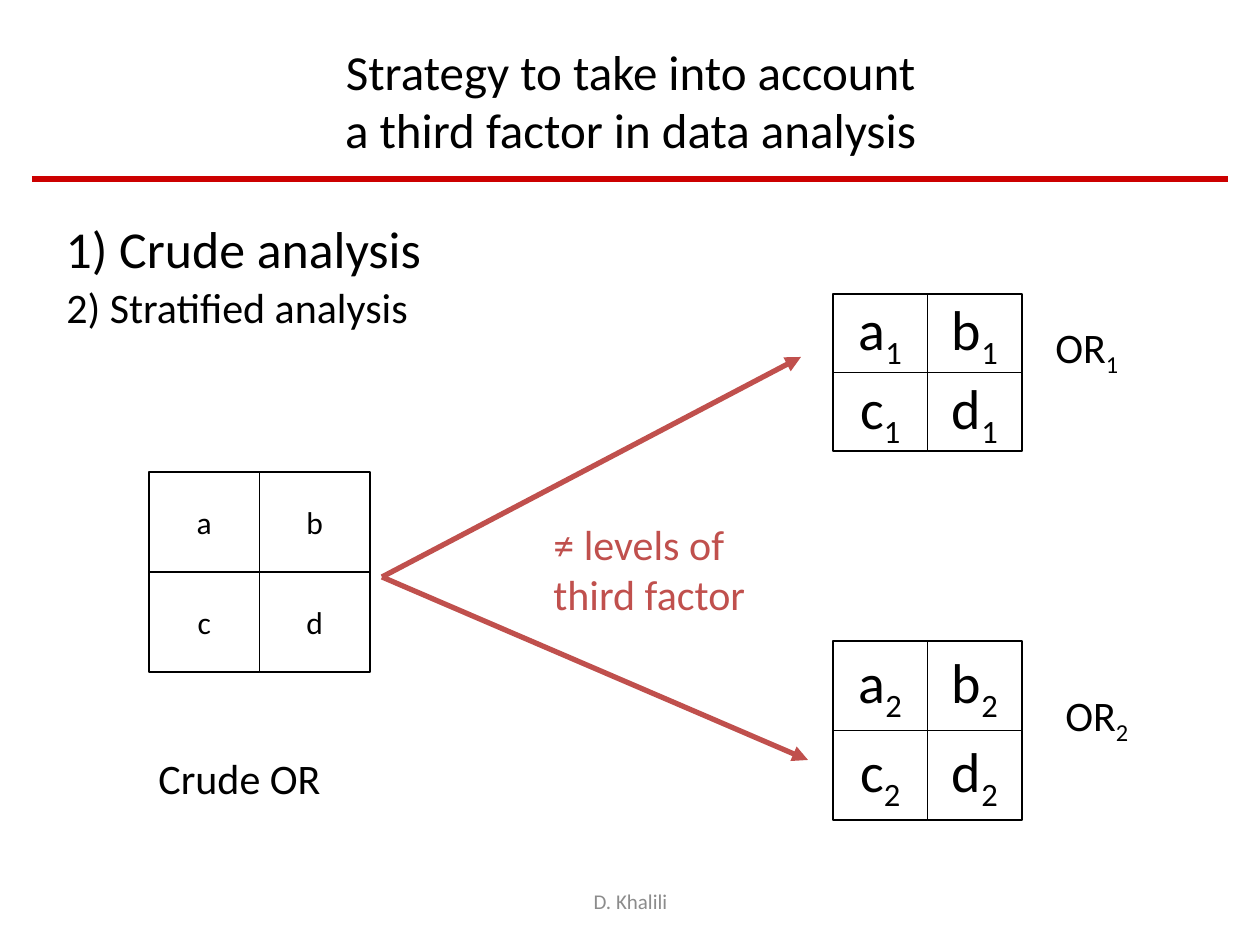
from dataclasses import dataclass

from lxml import etree
from pptx import Presentation
from pptx.dml.color import RGBColor
from pptx.enum.shapes import MSO_CONNECTOR, MSO_SHAPE
from pptx.enum.text import MSO_ANCHOR, MSO_AUTO_SIZE, PP_ALIGN
from pptx.oxml.ns import qn
from pptx.util import Emu, Inches, Pt

LINE, RECT = MSO_CONNECTOR.STRAIGHT, MSO_SHAPE.RECTANGLE
TOP, MID = MSO_ANCHOR.TOP, MSO_ANCHOR.MIDDLE
LEFT, MIDDLE = PP_ALIGN.LEFT, PP_ALIGN.CENTER
FIXED = MSO_AUTO_SIZE.NONE
FONT = "Calibri"
SCALE = 914400 / 126
COLORS = {"ink": "000000", "rule": "CC0000", "accent": "C0504D", "foot": "8C8C8C"}


@dataclass
class Box:
    x: int
    y: int
    w: int
    h: int


@dataclass
class Grid:
    """A two by two table of counts; sub is the stratum number."""
    box: Box
    size: int
    sub: str = ""


@dataclass
class Label:
    box: Box
    text: str
    sub: str = ""
    color: str = "ink"
    size: float = 24
    align: PP_ALIGN = LEFT
    anchor: MSO_ANCHOR = TOP
    hang: bool = False


@dataclass
class Link:
    x1: int
    y1: int
    x2: int
    y2: int
    color: str = "accent"
    head: bool = True


TITLE = Label(Box(95, 21, 1071, 158),
              "Strategy to take into account\na third factor in data analysis",
              size=28, align=MIDDLE, anchor=MID)
BODY = Label(Box(53, 210, 408, 64), "1) Crude analysis", size=29.6, hang=True)
LABELS = [
    Label(Box(146, 746, 222, 63), "Crude OR"),
    Label(Box(54, 275, 456, 69), "2) Stratified analysis", hang=True),
    Label(Box(1043, 315, 103, 63), "OR", "1"),
    Label(Box(1053, 683, 103, 63), "OR", "2"),
    Label(Box(541, 512, 247, 113), "≠ levels of\nthird factor", color="accent"),
    Label(Box(431, 876, 399, 50), "D. Khalili", color="foot", size=12,
          align=MIDDLE, anchor=MID),
]
GRIDS = [
    Grid(Box(149, 472, 221, 200), 18),
    Grid(Box(833, 294, 189, 157), 32, "1"),
    Grid(Box(833, 641, 189, 179), 32, "2"),
]
LINKS = [
    Link(32, 179, 1228, 179, "rule", False),
    Link(382, 577, 801, 357),
    Link(382, 577, 808, 760),
]


def px(n: float) -> Emu:
    return Emu(round(n * SCALE))


def rgb(name: str) -> RGBColor:
    return RGBColor.from_string(COLORS[name])


def add_run(para, text: str, size: float, color: str, low: bool = False) -> None:
    run = para.add_run()
    run.text = text
    run.font.name, run.font.size = FONT, Pt(size)
    run.font.color.rgb = rgb(color)
    if low:
        run._r.get_or_add_rPr().set("baseline", "-25000")


def write(shape, label: Label, wrap: bool = True) -> None:
    frame = shape.text_frame
    frame.auto_size, frame.word_wrap = FIXED, wrap
    frame.vertical_anchor = label.anchor
    para = frame.paragraphs[0]
    para.alignment = label.align
    if label.hang:
        para.space_before = Pt(round(label.size * 0.2, 1))
        props = para._p.get_or_add_pPr()
        props.set("marL", str(Inches(0.5)))
        props.set("indent", str(-Inches(0.5)))
        etree.SubElement(props, qn("a:buNone"))
    for i, line in enumerate(label.text.split("\n")):
        if i:
            para.add_line_break()
        add_run(para, line, label.size, label.color)
    if label.sub:
        add_run(para, label.sub, label.size, label.color, True)


def fill_holder(shape, label: Label) -> None:
    """Move a placeholder to its label's box and write the label in it."""
    box = label.box
    shape.left, shape.top = px(box.x), px(box.y)
    shape.width, shape.height = px(box.w), px(box.h)
    write(shape, label)


def add_label(shapes, label: Label) -> None:
    box = label.box
    write(shapes.add_textbox(px(box.x), px(box.y), px(box.w), px(box.h)), label)


def add_grid(shapes, grid: Grid) -> None:
    box = grid.box
    w, h = box.w / 2, box.h / 2
    for i, name in enumerate("abcd"):
        row, col = divmod(i, 2)
        cell = shapes.add_shape(RECT, px(box.x + col * w), px(box.y + row * h),
                                px(w), px(h))
        cell.shadow.inherit = False
        cell.fill.background()
        cell.line.color.rgb, cell.line.width = rgb("ink"), Pt(1)
        write(cell, Label(box, name, grid.sub, size=grid.size,
                          align=MIDDLE, anchor=MID), wrap=False)


def add_link(shapes, link: Link) -> None:
    line = shapes.add_connector(LINE, px(link.x1), px(link.y1),
                                px(link.x2), px(link.y2))
    line.line.color.rgb, line.line.width = rgb(link.color), Pt(3)
    if link.head:
        etree.SubElement(line.line._get_or_add_ln(), qn("a:tailEnd"), type="triangle")
    etree.SubElement(line._element.spPr, qn("a:effectLst"))


def main() -> None:
    deck = Presentation()
    deck.slide_width, deck.slide_height = Inches(10), Inches(7.5)
    slide = deck.slides.add_slide(deck.slide_layouts[1])
    shapes = slide.shapes
    fill_holder(shapes.title, TITLE)
    fill_holder(slide.placeholders[1], BODY)
    for grid in GRIDS:
        add_grid(shapes, grid)
    for label in LABELS:
        add_label(shapes, label)
    for link in LINKS:
        add_link(shapes, link)
    deck.save("out.pptx")


if __name__ == "__main__":
    main()
